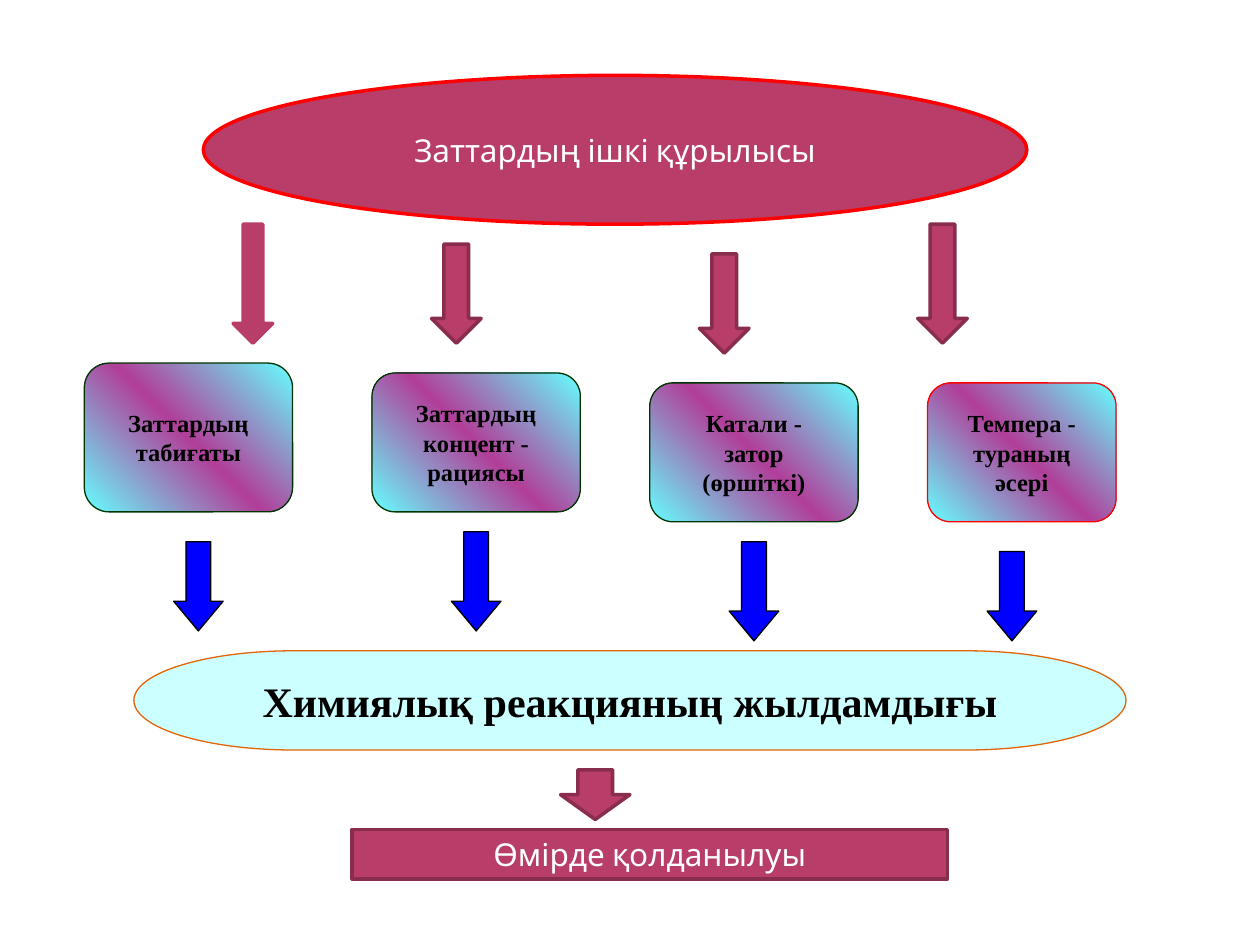
from copy import deepcopy

from pptx import Presentation
from pptx import util as u
from pptx.dml.color import RGBColor
from pptx.enum import shapes, text

KIND = shapes.MSO_SHAPE
HUES = {
    "rose": "B83D68", "wine": "882D4D", "red": "FF0000", "blue": "0000FF",
    "black": "000000", "white": "FFFFFF", "ice": "CCFFFF", "rust": "E36406",
    "cyan": "66FFFF", "plum": "B13F9A", "green": "003300",
}


def hue(name):
    return RGBColor.from_string(HUES[name])


def write(shape, lines, font="Times New Roman", size=14, color="black",
          bold=True, wrap=False):
    frame = shape.text_frame
    frame.word_wrap = wrap
    frame.vertical_anchor = text.MSO_ANCHOR.MIDDLE
    for i, line in enumerate(lines):
        para = frame.add_paragraph() if i else frame.paragraphs[0]
        para.alignment = text.PP_ALIGN.CENTER
        run = para.add_run()
        run.text = line
        run.font.name = font
        run.font.size = u.Pt(size)
        run.font.bold = bold
        run.font.color.rgb = hue(color)


class Board:
    plain = {"font": "Cabin", "size": 18, "color": "white",
             "bold": False, "wrap": True}

    def __init__(self, slide):
        self.slide = slide

    def shape(self, kind, at, fill, line, width):
        item = self.slide.shapes.add_shape(kind, *map(u.Cm, at))
        item.shadow.inherit = False
        if fill:
            item.fill.solid()
            item.fill.fore_color.rgb = hue(fill)
        item.line.color.rgb = hue(line)
        item.line.width = u.Pt(width)
        return item

    def panel(self, kind, at, label, line="wine"):
        write(self.shape(kind, at, "rose", line, 2), [label], **self.plain)

    def factor(self, at, lines, line="green"):
        item = self.shape(KIND.ROUNDED_RECTANGLE, at, None, line, 0.75)
        item.fill.gradient()
        item.fill.gradient_angle = 45
        first = item.fill.gradient_stops[0]._gs
        first.addnext(deepcopy(first))
        stops = zip(item.fill.gradient_stops, ("cyan", "plum", "cyan"))
        for i, (stop, name) in enumerate(stops):
            stop.position = i / 2
            stop.color.rgb = hue(name)
        write(item, lines)

    def arrow(self, at, fill="rose", line="wine", width=2, head=0.5):
        item = self.shape(KIND.DOWN_ARROW, at, fill, line, width)
        item.adjustments[1] = head

    def result(self, at, label):
        item = self.shape(KIND.FLOWCHART_TERMINATOR, at, "ice", "rust", 0.75)
        write(item, [label], size=24)


def main():
    deck = Presentation()
    deck.slide_width, deck.slide_height = u.Cm(25.4), u.Cm(19.05)
    board = Board(deck.slides.add_slide(deck.slide_layouts[6]))

    board.factor((1.7, 7.32, 4.2, 3), ["Заттардың", "табиғаты"])
    board.factor((7.5, 7.52, 4.2, 2.8), ["Заттардың", "концент -", "рациясы"])
    board.factor((13.1, 7.72, 4.2, 2.8), ["Катали -", "затор", "(өршіткі)"])
    board.factor((18.7, 7.72, 3.8, 2.8), ["Темпера -", "тураның", "әсері"],
                 line="red")

    for left, top, high in ((3.5, 10.92, 1.8), (9.1, 10.72, 2),
                            (14.7, 10.92, 2), (19.9, 11.12, 1.8)):
        board.arrow((left, top, 1, high), "blue", "black", 0.75, 0.6)
    board.result((2.7, 13.12, 20, 2), "Химиялық реакцияның жылдамдығы")

    board.panel(KIND.OVAL, (4.1, 1.52, 16.6, 3), "Заттардың ішкі құрылысы",
                line="red")
    board.arrow((4.7, 4.52, 0.8, 2.4), line="rose")
    for at in ((8.7, 4.92, 1, 2), (14.1, 5.12, 1, 2),
               (18.5, 4.52, 1, 2.4), (11.3, 15.52, 1.4, 1)):
        board.arrow(at)
    board.panel(KIND.RECTANGLE, (7.1, 16.72, 12, 1), "Өмірде қолданылуы")

    deck.save("out.pptx")


if __name__ == "__main__":
    main()
